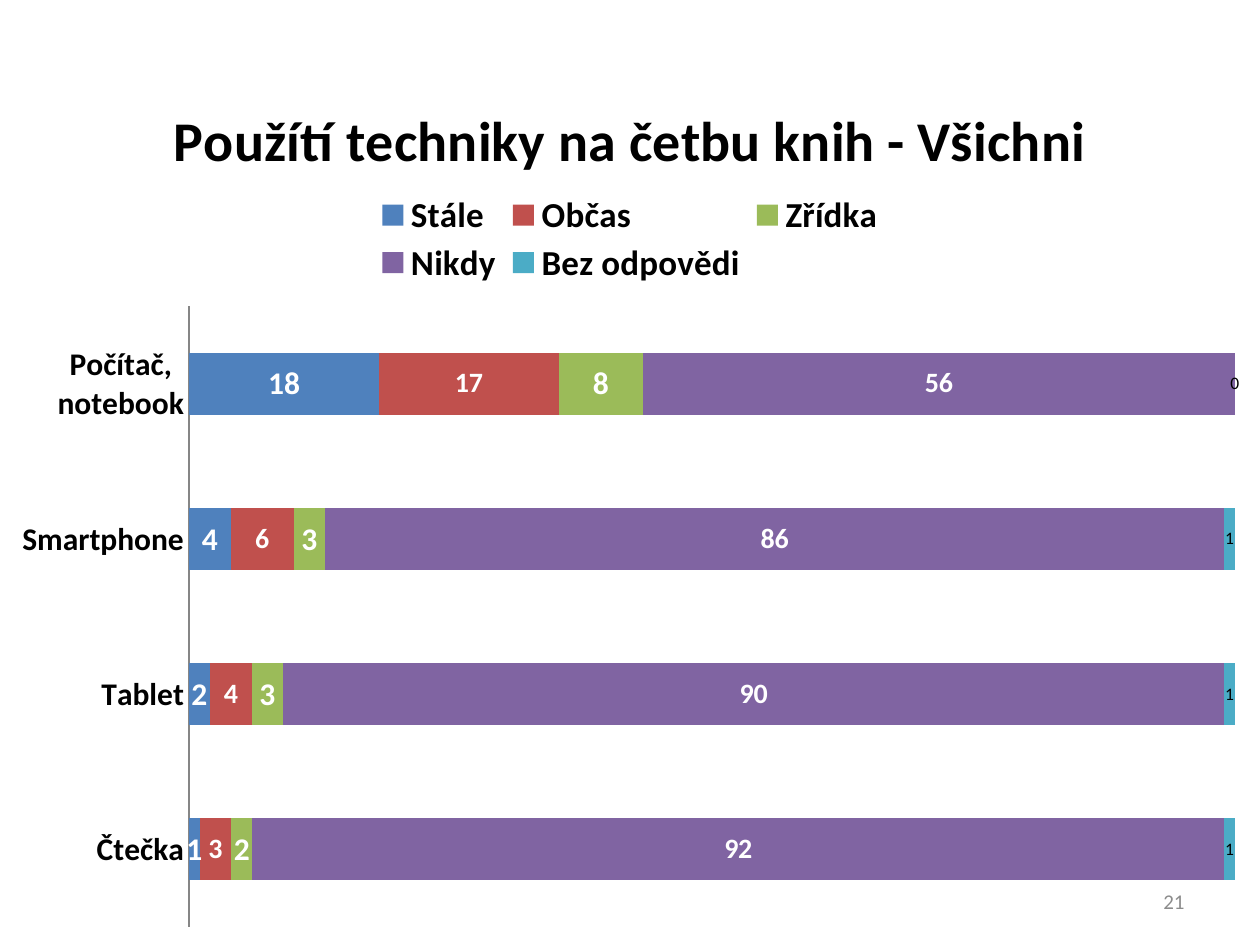
import pptx
import pptx.chart.data
import pptx.dml.color
import pptx.enum.chart
import pptx.enum.text
import pptx.oxml
import pptx.oxml.ns
import pptx.util

Pt = pptx.util.Pt
FONT = "Calibri"
DEVICES = ["Čtečka", "Tablet", "Smartphone", "Počítač, notebook"]
# answer, share per device, bar colour, label size, label colour, label bold
ANSWERS = [
    ("Stále", (1, 2, 4, 18), "4F81BD", 18, "FFFFFF", True),
    ("Občas", (3, 4, 6, 17), "C0504D", 16, "FFFFFF", True),
    ("Zřídka", (2, 3, 3, 8), "9BBB59", 18, "FFFFFF", True),
    ("Nikdy", (92, 90, 86, 56), "8064A2", 16, "FFFFFF", True),
    ("Bez odpovědi", (1, 1, 1, 0), "4BACC6", 10, "000000", False),
]


def rgb(value):
    return pptx.dml.color.RGBColor.from_string(value)


def style(font, size, color="000000", bold=False):
    font.name = FONT
    font.size = Pt(size)
    font.bold = bold
    font.color.rgb = rgb(color)


def set_layout(chart, tag, index, target=None, **fractions):
    """Place a chart part by fractions of the chart's box."""
    part = chart.element.find(".//" + pptx.oxml.ns.qn(tag))
    for old in part.findall(pptx.oxml.ns.qn("c:layout")):
        part.remove(old)
    settings = [("layoutTarget", target)] if target else []
    settings += [("xMode", "edge"), ("yMode", "edge")]
    settings += fractions.items()
    children = "".join(f'<c:{name} val="{value}"/>' for name, value in settings)
    part.insert(index, pptx.oxml.parse_xml(
        f'<c:layout {pptx.oxml.ns.nsdecls("c")}>'
        f"<c:manualLayout>{children}</c:manualLayout></c:layout>"))


def format_axes(chart):
    devices = chart.category_axis
    devices.major_tick_mark = pptx.enum.chart.XL_TICK_MARK.NONE
    devices.format.line.color.rgb = rgb("868686")
    style(devices.tick_labels.font, 18, bold=True)
    shares = chart.value_axis
    shares.visible = False
    shares.has_major_gridlines = False
    shares.tick_labels.number_format = "###0"
    shares.tick_labels.number_format_is_linked = False


def format_answers(plot):
    plot.gap_width = 150
    plot.overlap = 100
    plot.vary_by_categories = False
    for series, (_, _, fill, size, color, bold) in zip(plot.series, ANSWERS):
        series.format.fill.solid()
        series.format.fill.fore_color.rgb = rgb(fill)
        labels = series.data_labels
        labels.show_value = True
        labels.number_format = "###0"
        labels.number_format_is_linked = False
        style(labels.font, size, color, bold)


def add_usage_chart(slide, left, top, width, height):
    data = pptx.chart.data.CategoryChartData(number_format="###0")
    data.categories = DEVICES
    for name, shares, *_ in ANSWERS:
        data.add_series(name, shares)
    chart = slide.shapes.add_chart(
        pptx.enum.chart.XL_CHART_TYPE.BAR_STACKED_100,
        Pt(left), Pt(top), Pt(width), Pt(height), data).chart
    style(chart.font, 10)

    chart.has_title = True
    heading = chart.chart_title.text_frame.paragraphs[0].add_run()
    heading.text = "Použítí techniky na četbu knih - Všichni"
    style(heading.font, 32, bold=True)

    chart.has_legend = True
    chart.legend.position = pptx.enum.chart.XL_LEGEND_POSITION.TOP
    chart.legend.include_in_layout = False
    style(chart.legend.font, 20, bold=True)

    format_axes(chart)
    format_answers(chart.plots[0])
    set_layout(chart, "c:title", 1, x=0.13, y=0.05)
    set_layout(chart, "c:legend", 1, x=0.29, y=0.16, w=0.42, h=0.11)
    set_layout(chart, "c:plotArea", 0, "inner", x=0.15, y=0.29, w=0.83, h=0.69)


def add_page_number(slide, left, top, width, height):
    frame = slide.shapes.add_textbox(
        Pt(left), Pt(top), Pt(width), Pt(height)).text_frame
    frame.word_wrap = True
    frame.vertical_anchor = pptx.enum.text.MSO_ANCHOR.MIDDLE
    paragraph = frame.paragraphs[0]
    paragraph.alignment = pptx.enum.text.PP_ALIGN.RIGHT
    number = paragraph.add_run()
    number.text = "21"
    style(number.font, 12, "8C8C8C")


def main():
    deck = pptx.Presentation()
    deck.slide_width, deck.slide_height = Pt(720), Pt(540)
    slide = deck.slides.add_slide(deck.slide_layouts.get_by_name("Blank"))
    add_usage_chart(slide, 0, 26, 720, 514)
    add_page_number(slide, 516, 500.5, 168, 28.75)
    deck.save("out.pptx")


if __name__ == "__main__":
    main()
